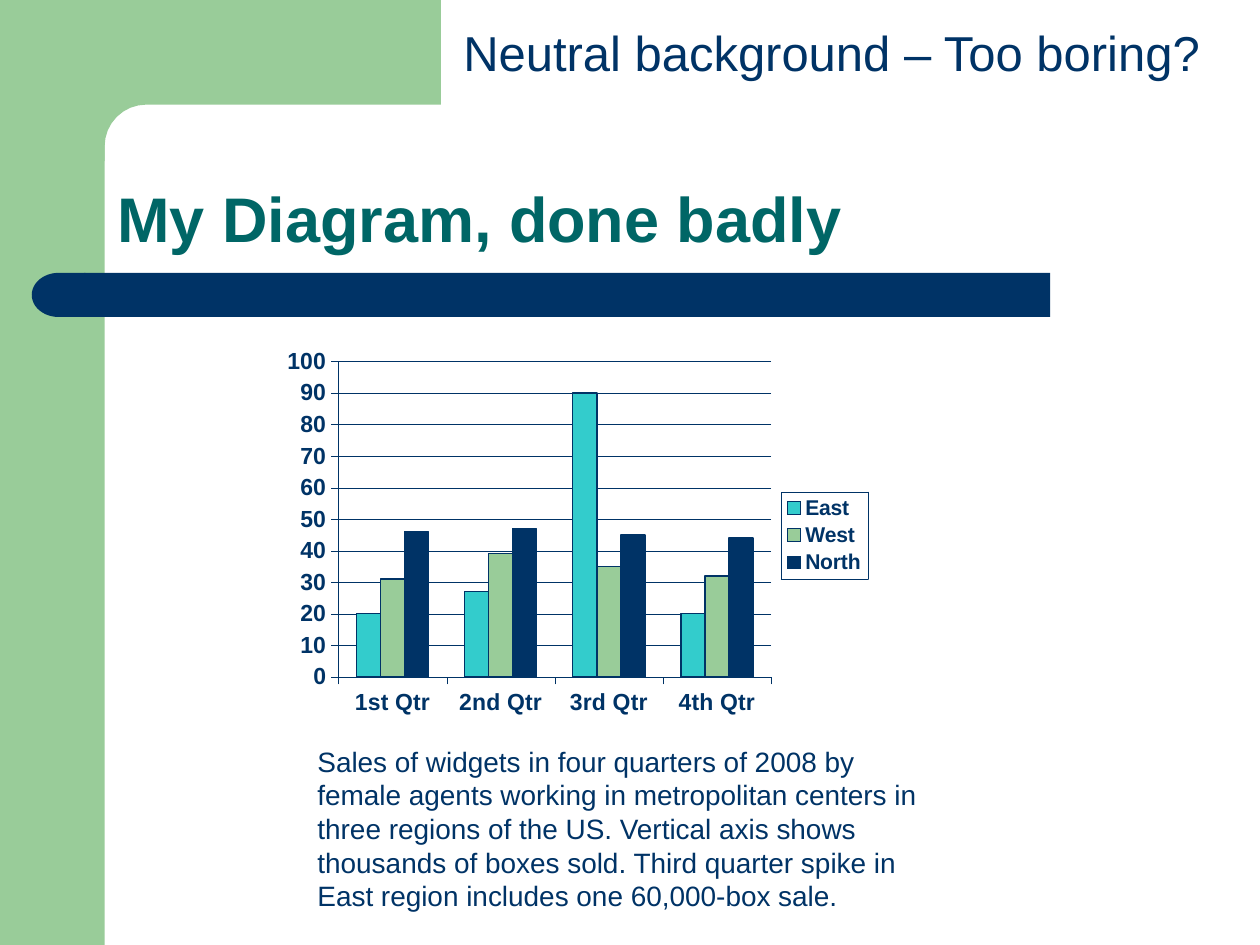
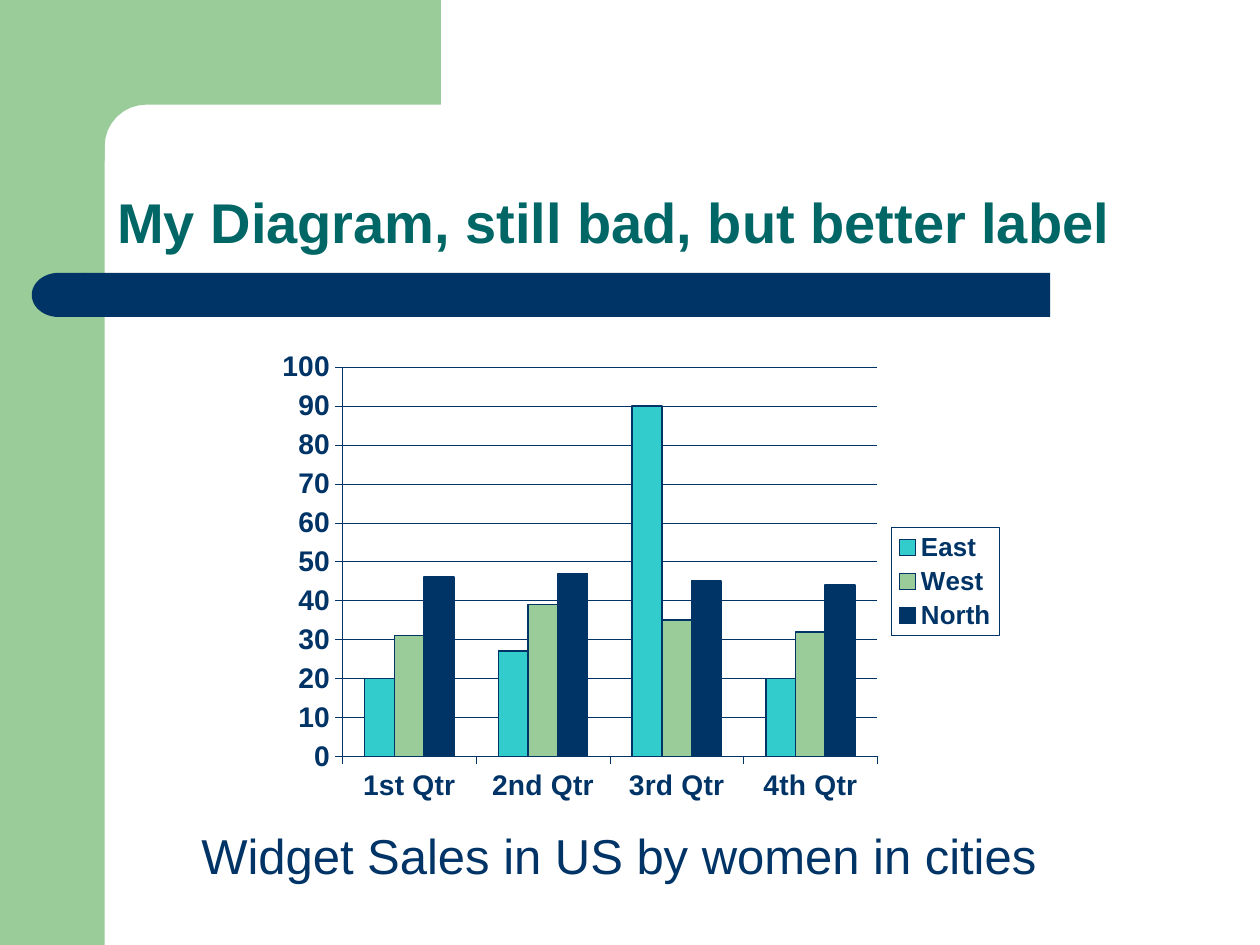
"""Build two slides that show one sales chart with a long and a short label."""
from math import cos, pi, sin

from lxml.etree import SubElement
from pptx import Presentation
from pptx.chart.data import CategoryChartData
from pptx.dml.color import RGBColor
from pptx.enum.chart import XL_CHART_TYPE, XL_LEGEND_POSITION, XL_TICK_LABEL_POSITION, XL_TICK_MARK
from pptx.enum.shapes import MSO_SHAPE
from pptx.enum.text import MSO_ANCHOR, MSO_AUTO_SIZE, PP_ALIGN
from pptx.oxml import parse_xml
from pptx.oxml.ns import nsdecls, qn
from pptx.util import Cm, Pt

GREEN = RGBColor(0x99, 0xCC, 0x99)
NAVY = RGBColor(0x00, 0x33, 0x66)
TEAL = RGBColor(0x00, 0x66, 0x66)
AQUA = RGBColor(0x33, 0xCC, 0xCC)
FACE = "Arial"

QUARTERS = ["1st Qtr", "2nd Qtr", "3rd Qtr", "4th Qtr"]
SALES = [
    ("East", (20, 27, 90, 20), AQUA),
    ("West", (31, 39, 35, 32), GREEN),
    ("North", (46, 47, 45, 44), NAVY),
]
PLOT = {"x": 0.076, "y": 0.058, "w": 0.741, "h": 0.803}

SLIDES = [
    {
        "title": ("My Diagram, done badly", 36),
        "chart": (5.79, 6.83, 11.91, 7.92),
        "sizes": (13.3, 12.2),
        "lines": (0.18, 0.75),
        "notes": [
            ("Sales of widgets in four quarters of 2008 by female agents working in "
             "metropolitan centers in three regions of the US. Vertical axis shows "
             "thousands of boxes sold. Third quarter spike in East region includes "
             "one 60,000-box sale.", 16, (6.15, 14.88, 12.9, 3.66)),
            ("Neutral background – Too boring?", 28, (9.09, 0.33, 15.6, 1.45)),
        ],
    },
    {
        "title": ("My Diagram, still bad, but better label", 32),
        "chart": (5.69, 6.83, 14.66, 9.78),
        "sizes": (16.2, 14.9),
        "lines": (0.22, 0.9),
        "notes": [("Widget Sales in US by women in cities", 28, (3.81, 16.51, 17.78, 1.45))],
    },
]


def style(font, size, color=NAVY, bold=False):
    font.name, font.size, font.bold = FACE, Pt(size), bold
    font.color.rgb = color


def paint(shape, color):
    shape.shadow.inherit = False
    shape.fill.solid()
    shape.fill.fore_color.rgb = color
    shape.line.fill.background()


deck = Presentation()
deck.slide_width, deck.slide_height = Cm(25.4), Cm(19.05)

side, bend = 2.11, 0.84
arc = [
    (side + bend * (1 - sin(step * pi / 16)), side + bend * (1 - cos(step * pi / 16)))
    for step in range(9)
]
corner = [(8.89, 0), (8.89, side), *arc, (side, 3.25), (1.27, 3.25), (1.27, 0)]
points = [(Cm(x), Cm(y)) for x, y in corner]

data = CategoryChartData()
data.categories = QUARTERS
for name, values, color in SALES:
    data.add_series(name, values)

for page in SLIDES:
    slide = deck.slides.add_slide(deck.slide_layouts[5])
    shapes = slide.shapes

    for kind, box, color, turn in [
        (MSO_SHAPE.RECTANGLE, (0, 0, side, 19.05), GREEN, 0),
        (MSO_SHAPE.RECTANGLE, (1.7, 5.5, 19.47, 0.89), NAVY, 0),
        (MSO_SHAPE.FLOWCHART_DELAY, (0.64, 5.5, 1.08, 0.89), NAVY, 180),
    ]:
        band = shapes.add_shape(kind, *map(Cm, box))
        band.rotation = turn
        paint(band, color)
    pen = shapes.build_freeform(*points[0])
    pen.add_line_segments(points[1:], close=True)
    paint(pen.convert_to_shape(), GREEN)

    title = shapes.title
    title.left, title.top, title.width, title.height = map(Cm, (2.11, 2.11, 22.02, 3.18))
    frame = title.text_frame
    frame.text, size = page["title"]
    frame.auto_size = MSO_AUTO_SIZE.NONE
    frame.vertical_anchor = MSO_ANCHOR.BOTTOM
    line = frame.paragraphs[0]
    line.alignment, line.line_spacing = PP_ALIGN.LEFT, 0.9
    style(line.runs[0].font, size, TEAL, True)

    chart = shapes.add_chart(
        XL_CHART_TYPE.COLUMN_CLUSTERED, *map(Cm, page["chart"]), data
    ).chart
    size, small = page["sizes"]
    thin, edge = page["lines"]
    chart.has_title = False
    style(chart.font, size, bold=True)
    plot = chart.plots[0]
    plot.gap_width, plot.overlap, plot.vary_by_categories = 150, 0, False
    for bars, (name, values, color) in zip(plot.series, SALES):
        bars.format.fill.solid()
        bars.format.fill.fore_color.rgb = color
        bars.format.line.color.rgb = NAVY
        bars.format.line.width = Pt(edge)

    across, up = chart.category_axis, chart.value_axis
    across.tick_label_position = XL_TICK_LABEL_POSITION.LOW
    up.minimum_scale, up.maximum_scale, up.major_unit = 0, 100, 10
    up.has_major_gridlines = True
    for axis in (across, up):
        axis.major_tick_mark = XL_TICK_MARK.OUTSIDE
        style(axis.tick_labels.font, size, bold=True)
    for rule in (across, up, up.major_gridlines):
        rule.format.line.color.rgb = NAVY
        rule.format.line.width = Pt(thin)

    chart.has_legend = True
    key = chart.legend
    key.position = XL_LEGEND_POSITION.RIGHT
    key.include_in_layout = False
    style(key.font, small, bold=True)
    frame = parse_xml(
        f'<c:spPr {nsdecls("c", "a")}><a:noFill/><a:ln w="{Pt(thin)}"><a:solidFill>'
        f'<a:srgbClr val="{NAVY}"/></a:solidFill></a:ln></c:spPr>'
    )
    key._element.find(qn("c:overlay")).addnext(frame)

    area = chart._chartSpace.chart.plotArea
    for old in area.findall(qn("c:layout")):
        area.remove(old)
    layout = parse_xml(f'<c:layout {nsdecls("c")}><c:manualLayout/></c:layout>')
    marks = {"layoutTarget": "inner", "xMode": "edge", "yMode": "edge", **PLOT}
    for tag, value in marks.items():
        SubElement(layout[0], qn("c:" + tag)).set("val", str(value))
    area.insert(0, layout)

    for text, size, box in page["notes"]:
        frame = shapes.add_textbox(*map(Cm, box)).text_frame
        frame.word_wrap = True
        frame.text = text
        style(frame.paragraphs[0].runs[0].font, size)

deck.save("out.pptx")
